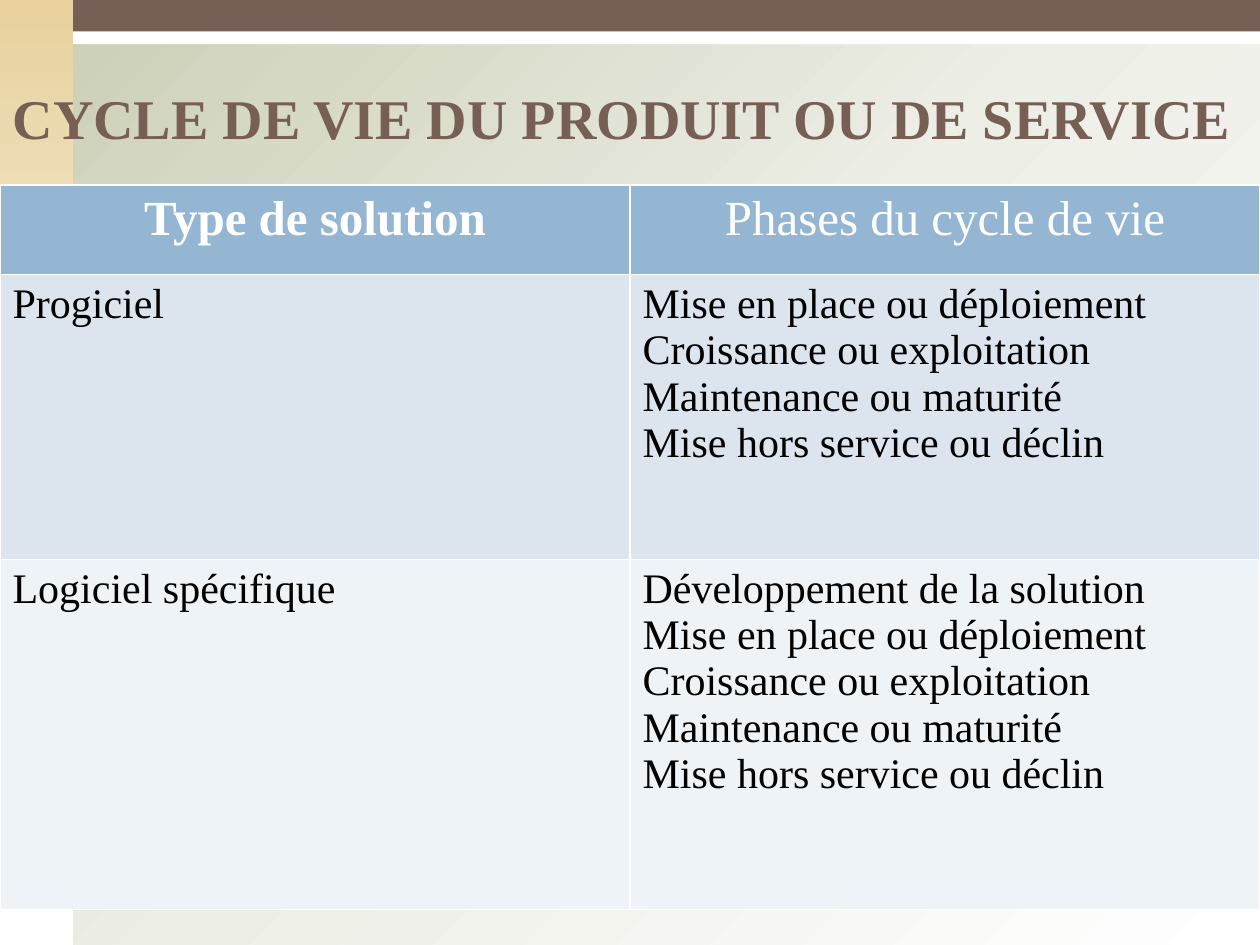
from dataclasses import dataclass

from lxml import etree
from pptx import Presentation, util as u
from pptx.dml.color import RGBColor
from pptx.enum import shapes, text
from pptx.oxml import ns


@dataclass
class Theme:
    """Holds the colours, type sizes and grid of the deck."""
    font: str = "Times New Roman"
    brown: str = "775F55"
    white: str = "FFFFFF"
    black: str = "000000"
    blue: str = "94B6D2"
    rows: tuple = ("DCE5EE", "EEF3F7")
    sage: tuple = ("C9CDB3", "EDEEE6", "FFFFFF")
    sand: tuple = ("E8D19D", "F7F0DE", "FFFFFF")
    title: int = 32
    head: int = 28
    body: int = 24
    cols: int = 100
    lines: int = 75


def write(frame, words, size, color, font, bold=False, align=text.PP_ALIGN.LEFT):
    """Fill a text frame, one paragraph for each line of words."""
    frame.text = words
    for para in frame.paragraphs:
        para.alignment = align
        for run in para.runs:
            run.font.name, run.font.size, run.font.bold = font, u.Pt(size), bold
            run.font.color.rgb = RGBColor.from_string(color)


def blend(fill, root, hues, angle):
    """Give a fill evenly spaced gradient stops, turned clockwise by angle."""
    fill.gradient()
    fill.gradient_angle = 360 - angle
    stops = next(root.iter(ns.qn("a:gsLst")))
    for stop in list(stops):
        stops.remove(stop)
    for i, hue in enumerate(hues):
        pos = str(100000 * i // (len(hues) - 1))
        stop = etree.SubElement(stops, ns.qn("a:gs"), pos=pos)
        etree.SubElement(stop, ns.qn("a:srgbClr"), val=hue)


def edge(cell, color, width=1):
    """Draw the four borders of a table cell."""
    props = cell._tc.get_or_add_tcPr()
    for i, side in enumerate(("lnL", "lnR", "lnT", "lnB")):
        line = etree.Element(ns.qn(f"a:{side}"), w=str(u.Pt(width)))
        solid = etree.SubElement(line, ns.qn("a:solidFill"))
        etree.SubElement(solid, ns.qn("a:srgbClr"), val=color)
        props.insert(i, line)


class Deck:
    """Draws themed elements on the current slide."""

    def __init__(self, theme):
        """Open a deck with one title-only slide."""
        self.theme = theme
        self.prs = Presentation()
        self.prs.slide_width, self.prs.slide_height = u.Inches(10), u.Inches(7.5)
        self.slide = self.prs.slides.add_slide(self.prs.slide_layouts[5])

    def box(self, x, y, w, h):
        """Turn grid columns and rows into lengths."""
        col = self.prs.slide_width / self.theme.cols
        row = self.prs.slide_height / self.theme.lines
        return [u.Emu(round(n)) for n in (x * col, y * row, w * col, h * row)]

    def ground(self, hues, angle):
        """Shade the slide background."""
        blend(self.slide.background.fill, self.slide.element, hues, angle)

    def band(self, area, hues, angle=90):
        """Add a plain or shaded rectangle without outline."""
        band = self.slide.shapes.add_shape(shapes.MSO_SHAPE.RECTANGLE, *self.box(*area))
        band.shadow.inherit = False
        band.line.fill.background()
        if isinstance(hues, str):
            band.fill.solid()
            band.fill.fore_color.rgb = RGBColor.from_string(hues)
        else:
            blend(band.fill, band.element, hues, angle)

    def title(self, area, words):
        """Place and format the title above the bands."""
        look, title = self.theme, self.slide.shapes.title
        title.left, title.top, title.width, title.height = self.box(*area)
        frame = title.text_frame
        frame.word_wrap, frame.auto_size = True, text.MSO_AUTO_SIZE.NONE
        frame.vertical_anchor = text.MSO_ANCHOR.BOTTOM
        write(frame, words, look.title, look.brown, look.font, bold=True)
        title.element.getparent().append(title.element)

    def table(self, area, highs, data):
        """Add a table with a header row and tinted body rows."""
        look = self.theme
        grid = self.slide.shapes.add_table(len(data), len(data[0]), *self.box(*area)).table
        for r, (high, row) in enumerate(zip(highs, data)):
            grid.rows[r].height = self.box(0, 0, 0, high)[3]
            for c, words in enumerate(row):
                cell = grid.cell(r, c)
                cell.fill.solid()
                tint = look.rows[r - 1] if r else look.blue
                cell.fill.fore_color.rgb = RGBColor.from_string(tint)
                edge(cell, look.white)
                if r:
                    write(cell.text_frame, words, look.body, look.black, look.font)
                else:
                    write(cell.text_frame, words, look.head, look.white, look.font,
                          bold=c == 0, align=text.PP_ALIGN.CENTER)


def main():
    """Build and save the slide."""
    look = Theme()
    deck = Deck(look)
    side, bar = 5.8, 2.5
    deck.ground(look.sage, 45)
    deck.band((0, 0, look.cols, 3.5), look.white)
    deck.band((0, 0, side, look.lines), look.sand)
    deck.band((side, 0, look.cols - side, bar), look.brown)
    deck.title((0, 0, look.cols, 12.5), "CYCLE DE VIE DU PRODUIT OU DE SERVICE")
    phases = "\n".join(("Mise en place ou déploiement", "Croissance ou exploitation",
                        "Maintenance ou maturité", "Mise hors service ou déclin"))
    highs = (7.1, 22.6, 27.8)
    deck.table((0, 14.7, look.cols, sum(highs)), highs, (
        ("Type de solution", "Phases du cycle de vie"),
        ("Progiciel", phases),
        ("Logiciel spécifique", "Développement de la solution\n" + phases),
    ))
    deck.prs.save("out.pptx")


if __name__ == "__main__":
    main()
